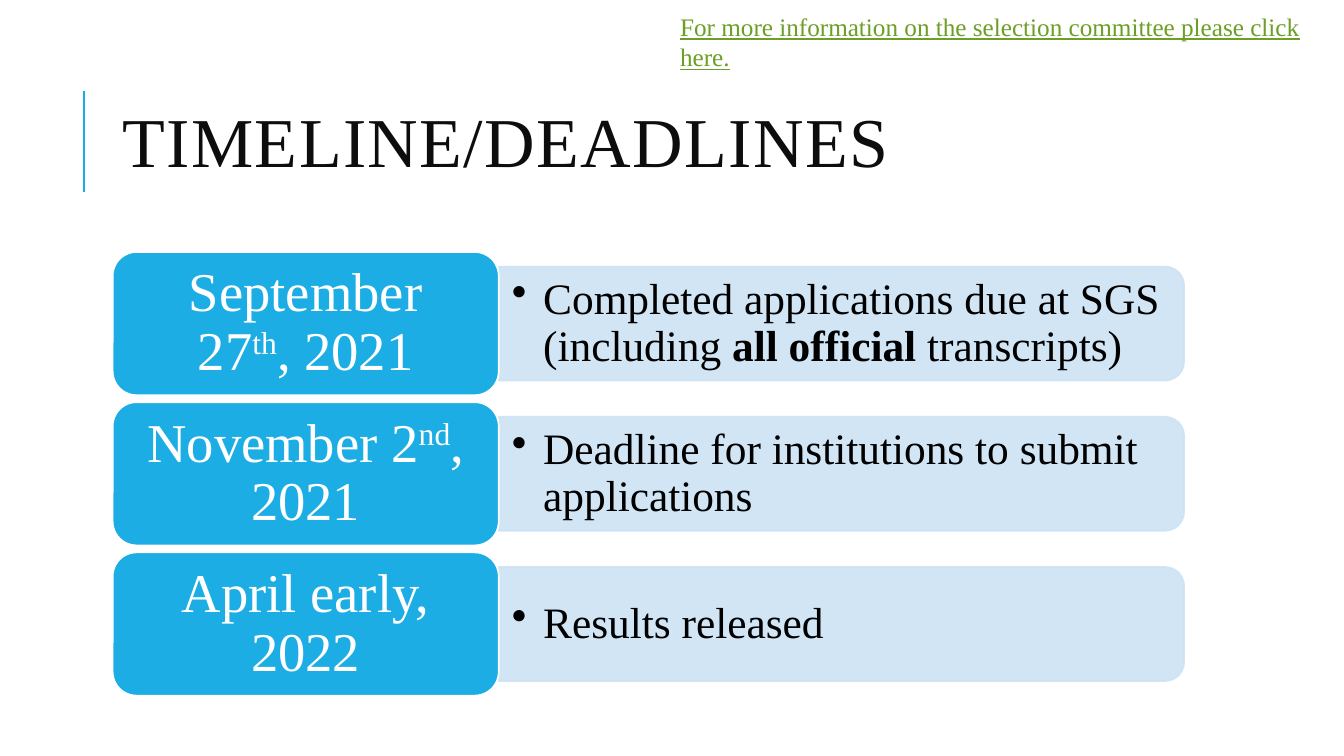
import pptx
import pptx.util
import pptx.dml.color
import pptx.enum.shapes
import pptx.enum.text
import pptx.oxml
import pptx.oxml.ns
from pptx.util import Cm, Pt

HEADING = "TIMELINE/DEADLINES"
COMMITTEE_LINK = "For more information on the selection committee please click here."
DEADLINES = [
    ([("September 27", ""), ("th", "super"), (", 2021", "")],
     [("Completed applications due at SGS (including ", ""),
      ("all official ", "bold"), ("transcripts)", "")]),
    ([("November 2", ""), ("nd", "super"), (", 2021", "")],
     [("Deadline for institutions to submit applications", "")]),
    ([("April early, 2022", "")],
     [("Results released", "")]),
]
COLORS = {"accent": "1CADE4", "band": "CDE3F5", "heading": "0D0D0D",
          "date": "FFFFFF", "task": "000000", "link": "6B9F25"}
FONT = "Times New Roman"
LEFT, TOP, PITCH = 2.84, 6.35, 3.785
DATE_W, DATE_H = 9.73, 3.61
BAND_W, BAND_H = 17.27, 2.87
TASK_W, TASK_H = 17.15, 2.59
SHAPES = pptx.enum.shapes.MSO_SHAPE
ALIGN = pptx.enum.text.PP_ALIGN


def rgb(name):
    """Return the named colour."""
    return pptx.dml.color.RGBColor.from_string(COLORS[name])


def add_xml(parent, tag, **attributes):
    """Append a DrawingML element to a parent."""
    child = pptx.oxml.parse_xml(f"<a:{tag} {pptx.oxml.ns.nsdecls('a')}/>")
    for key, value in attributes.items():
        child.set(key, str(value))
    parent.append(child)


def write(box, pieces, size, color, align=ALIGN.LEFT, spacing=1.0, margins=(0.25, 0.13), middle=True):
    """Fill a box with one paragraph of styled pieces and return it."""
    frame = box.text_frame
    frame.word_wrap = True
    anchors = pptx.enum.text.MSO_ANCHOR
    frame.vertical_anchor = anchors.MIDDLE if middle else anchors.TOP
    frame.margin_left = frame.margin_right = Cm(margins[0])
    frame.margin_top = frame.margin_bottom = Cm(margins[1])
    paragraph = frame.paragraphs[0]
    paragraph.alignment = align
    paragraph.line_spacing = spacing
    paragraph.font.name = FONT
    paragraph.font.size = Pt(size)
    paragraph.font.color.rgb = rgb(color)
    for text, style in pieces:
        run = paragraph.add_run()
        run.text = text
        if style == "bold":
            run.font.bold = True
        elif style == "underline":
            run.font.underline = True
        elif style == "super":
            run._r.get_or_add_rPr().set("baseline", "30000")
        elif style == "tracked":
            run._r.get_or_add_rPr().set("spc", "100")
    return paragraph


def add_block(slide, kind, place, fill, line):
    """Add a filled and outlined preset shape."""
    block = slide.shapes.add_shape(kind, *map(Cm, place))
    block.shadow.inherit = False
    block.fill.solid()
    block.fill.fore_color.rgb = rgb(fill)
    block.line.color.rgb = rgb(line)
    block.line.width = Pt(1.25)
    return block


def add_deadline(slide, index, date, task):
    """Add one row: the task band and its date card."""
    top = TOP + index * PITCH
    middle = top + DATE_H / 2
    band_left = LEFT + DATE_W
    band_center = band_left + BAND_W / 2

    band = add_block(slide, SHAPES.ROUND_2_SAME_RECTANGLE,
                     (band_center - BAND_H / 2, middle - BAND_W / 2, BAND_H, BAND_W), "band", "band")
    band.rotation = 90
    for tint in band._element.spPr.iter(pptx.oxml.ns.qn("a:srgbClr")):
        add_xml(tint, "alpha", val=90000)

    task_box = slide.shapes.add_textbox(*map(Cm, (band_left, middle - TASK_H / 2, TASK_W, TASK_H)))
    paragraph = write(task_box, task, 31, "task", spacing=0.9, margins=(0.33, 0.15))
    properties = paragraph._p.get_or_add_pPr()
    properties.set("marL", str(Cm(0.79)))
    properties.set("indent", str(-Cm(0.79)))
    add_xml(properties, "buChar", char="•")
    bullet = properties[-1]
    default_font = properties.find(pptx.oxml.ns.qn("a:defRPr"))
    default_font.addprevious(bullet)

    card = add_block(slide, SHAPES.ROUNDED_RECTANGLE, (LEFT, top, DATE_W, DATE_H), "accent", "date")
    write(card, date, 39, "date", ALIGN.CENTER, 0.9, (0.41, 0.2))


def main():
    """Build the timeline slide."""
    deck = pptx.Presentation()
    deck.slide_width, deck.slide_height = Cm(33.87), Cm(19.05)
    slide = deck.slides.add_slide(deck.slide_layouts[6])

    rule = slide.shapes.add_connector(pptx.enum.shapes.MSO_CONNECTOR.STRAIGHT,
                                      *map(Cm, (2.11, 4.83, 2.11, 2.29)))
    rule.line.color.rgb = rgb("accent")
    rule.line.width = Pt(1.5)
    add_xml(rule._element.spPr, "effectLst")

    heading = slide.shapes.add_textbox(*map(Cm, (LEFT, 1.63, 27, 4.17)))
    write(heading, [(HEADING, "tracked")], 50, "heading", spacing=0.8)

    for index, (date, task) in enumerate(DEADLINES):
        add_deadline(slide, index, date, task)

    link = slide.shapes.add_textbox(*map(Cm, (16.89, 0.15, 16.9, 1.8)))
    write(link, [(COMMITTEE_LINK, "underline")], 18, "link", middle=False)

    deck.save("out.pptx")


if __name__ == "__main__":
    main()
